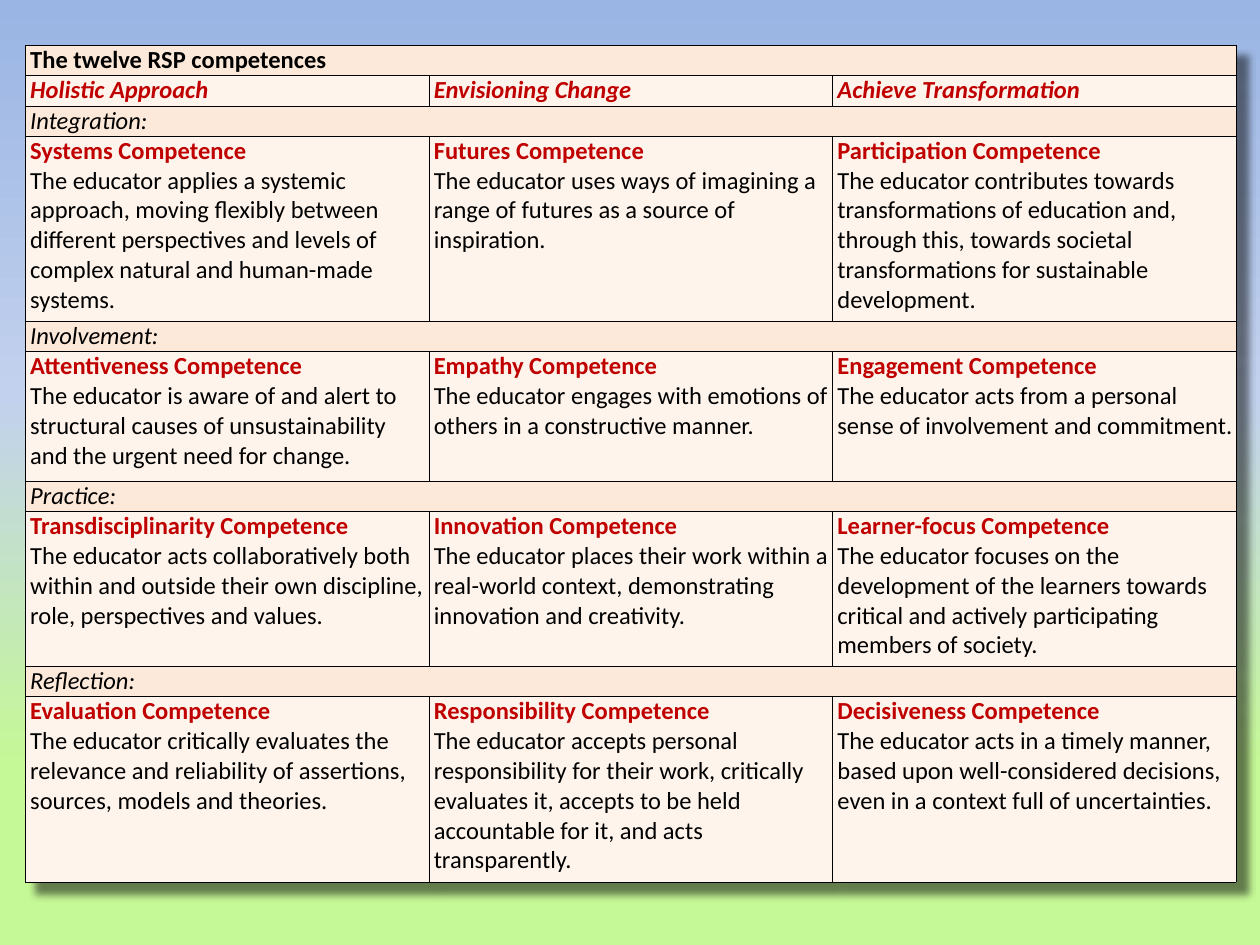
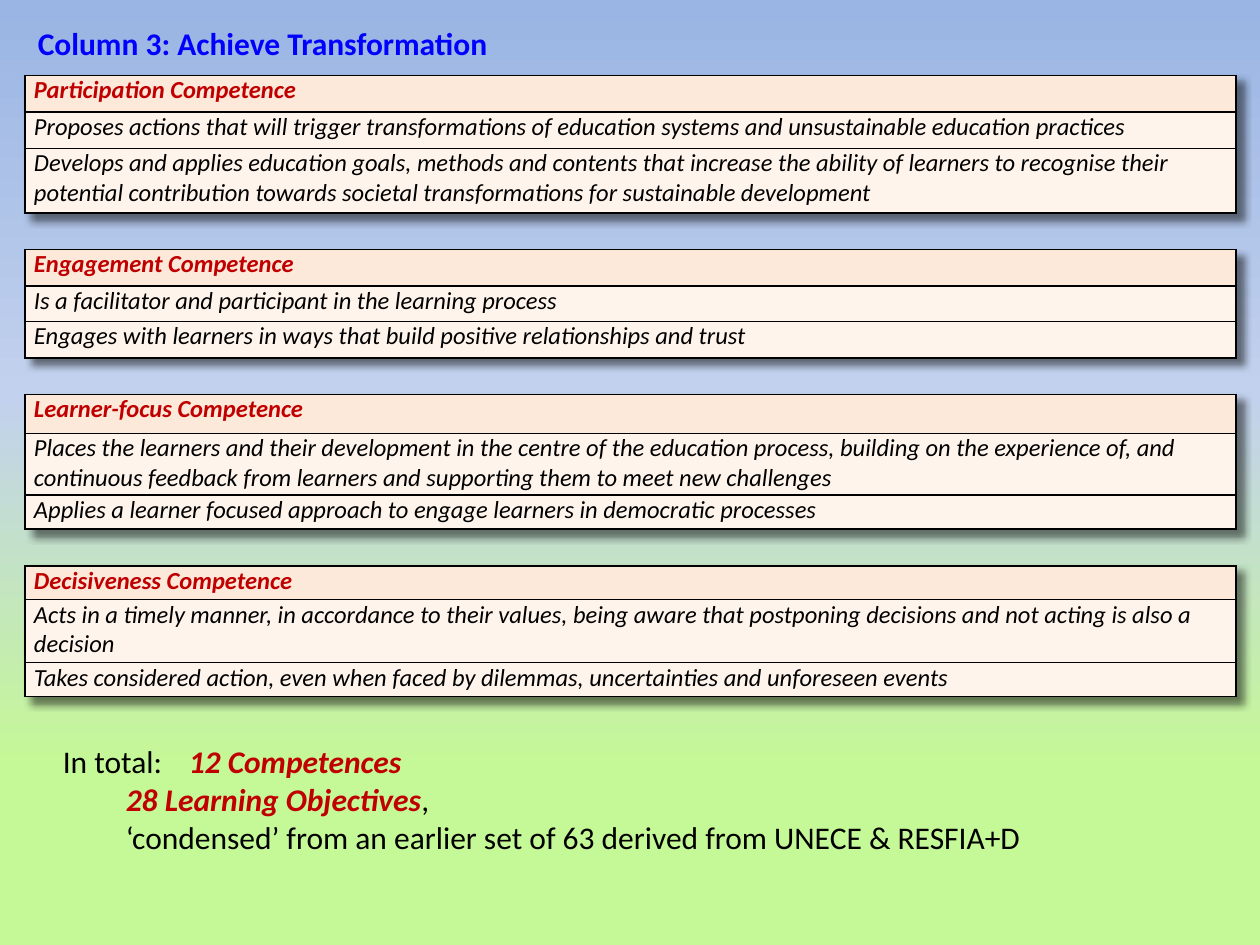
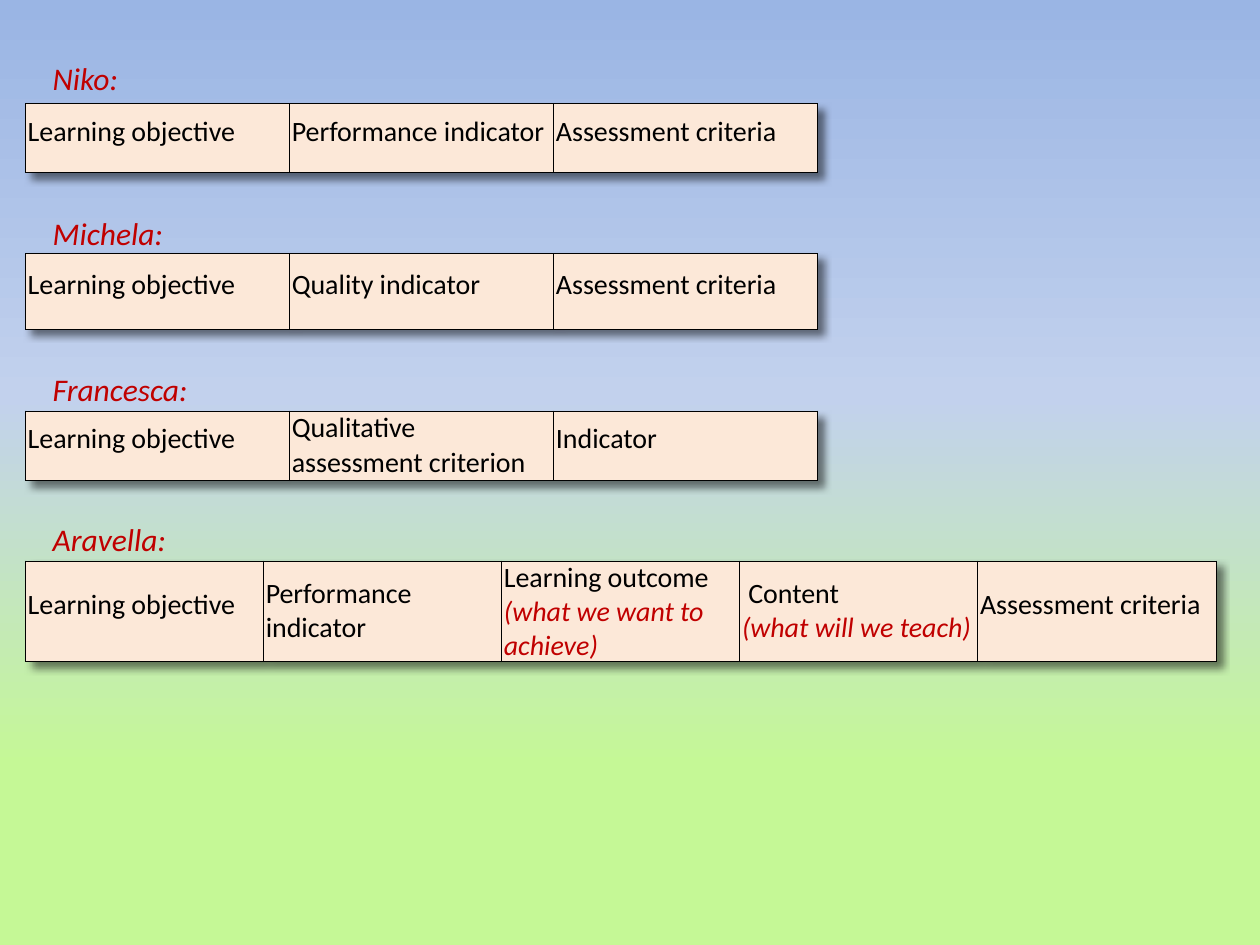
from copy import deepcopy
from typing import NamedTuple

from lxml import etree
from pptx import Presentation
from pptx.dml.color import RGBColor
from pptx.enum.text import MSO_ANCHOR, MSO_AUTO_SIZE, PP_ALIGN
from pptx.oxml.ns import qn
from pptx.slide import Slide
from pptx.table import Table, _Cell
from pptx.text.text import TextFrame
from pptx.util import Emu, Inches, Pt

TOP, MIDDLE = MSO_ANCHOR.TOP, MSO_ANCHOR.MIDDLE
FIT_SHAPE = MSO_AUTO_SIZE.SHAPE_TO_FIT_TEXT
LEFT = PP_ALIGN.LEFT

FONT = "Calibri"
BLACK, RED, BLUE = "000000", "C00000", "0000FF"
BAND, PALE, PEACH = "FDE9D9", "FEF4EC", "FCE8D8"
BACKGROUND = [(0, "9AB5E4"), (0.42, "C2D1ED"), (0.81, "C5F896")]
TITLE_ONLY, BLANK = 5, 6
TABLE_LEFT, FULL_WIDTH = 0.2, 9.61


class Span(NamedTuple):
    text: str
    color: str = BLACK
    bold: bool = False
    italic: bool = False


Paragraphs = list[list[Span]]


class CellText(NamedTuple):
    paragraphs: Paragraphs
    fill: str
    line_spacing: float | None = None


class TableStyle(NamedTuple):
    size: int
    border: float
    margin_left: float
    margin_right: float
    anchor: MSO_ANCHOR
    shadow_distance: float


class Stage(NamedTuple):
    name: str
    height: float
    competences: list[tuple[str, str]]


class Objectives(NamedTuple):
    competence: str
    top: float
    heights: list[float]
    objectives: list[str]


class Scheme(NamedTuple):
    author: str
    label_top: float
    label_width: float
    table_top: float
    width: float
    height: float
    cells: list[CellText]


OVERVIEW_STYLE = TableStyle(14, 0.25, 0.04, 0.02, TOP, 0.13)
OBJECTIVES_STYLE = TableStyle(14, 1, 0.07, 0.07, TOP, 0.07)
SCHEME_STYLE = TableStyle(16, 0.25, 0.02, 0.02, MIDDLE, 0.07)

APPROACHES = ["Holistic Approach", "Envisioning Change", "Achieve Transformation"]
BAR_HEIGHT = 0.24
STAGES = [
    Stage("Integration:", 1.47, [
        ("Systems Competence",
         "The educator applies a systemic approach, moving flexibly between different "
         "perspectives and levels of complex natural and human-made systems."),
        ("Futures Competence",
         "The educator uses ways of imagining a range of futures as a source of inspiration."),
        ("Participation Competence",
         "The educator contributes towards transformations of education and, through this, "
         "towards societal transformations for sustainable development."),
    ]),
    Stage("Involvement:", 1.03, [
        ("Attentiveness Competence",
         "The educator is aware of and alert to structural causes of unsustainability and "
         "the urgent need for change."),
        ("Empathy Competence",
         "The educator engages with emotions of others in a constructive manner."),
        ("Engagement Competence",
         "The educator acts from a personal sense of involvement and commitment."),
    ]),
    Stage("Practice:", 1.23, [
        ("Transdisciplinarity Competence",
         "The educator acts collaboratively both within and outside their own discipline, "
         "role, perspectives and values."),
        ("Innovation Competence",
         "The educator places their work within a real-world context, demonstrating "
         "innovation and creativity."),
        ("Learner-focus Competence",
         "The educator focuses on the development of the learners towards critical and "
         "actively participating members of society."),
    ]),
    Stage("Reflection:", 1.47, [
        ("Evaluation Competence",
         "The educator critically evaluates the relevance and reliability of assertions, "
         "sources, models and theories."),
        ("Responsibility Competence",
         "The educator accepts personal responsibility for their work, critically evaluates "
         "it, accepts to be held accountable for it, and acts transparently."),
        ("Decisiveness Competence",
         "The educator acts in a timely manner, based upon well-considered decisions, even "
         "in a context full of uncertainties."),
    ]),
]

TRANSFORMATION = [
    Objectives("Participation Competence", 0.6, [0.29, 0.29, 0.51], [
        "Proposes actions that will trigger transformations of education systems and "
        "unsustainable education practices",
        "Develops and applies education goals, methods and contents that increase the "
        "ability of learners to recognise their potential contribution towards societal "
        "transformations for sustainable development",
    ]),
    Objectives("Engagement Competence", 1.98, [0.29, 0.28, 0.29], [
        "Is a facilitator and participant in the learning process",
        "Engages with learners in ways that build positive relationships and trust",
    ]),
    Objectives("Learner-focus Competence", 3.13, [0.31, 0.49, 0.27], [
        "Places the learners and their development in the centre of the education process, "
        "building on the experience of, and continuous feedback from learners and "
        "supporting them to meet new challenges",
        "Applies a learner focused approach to engage learners in democratic processes",
    ]),
    Objectives("Decisiveness Competence", 4.49, [0.27, 0.5, 0.27], [
        "Acts in a timely manner, in accordance to their values, being aware that "
        "postponing decisions and not acting is also a decision",
        "Takes considered action, even when faced by dilemmas, uncertainties and "
        "unforeseen events",
    ]),
]

TOTALS = [
    [Span("In total:\t"), Span("12 Competences", RED, True, True)],
    [Span("\t28 Learning Objectives", RED, True, True), Span(",")],
    [Span("\t‘condensed’ from an earlier set of 63 derived from UNECE & RESFIA+D")],
]


def one_line(text: str) -> CellText:
    return CellText([[Span(text)]], PEACH, 12.1)


def wrapped(text: str, *remarks: str) -> CellText:
    """Cell at natural line spacing, with red remarks below its text."""
    return CellText([[Span(text)], *([Span(t, RED, italic=True)] for t in remarks)], PEACH)


OBJECTIVE = one_line("Learning objective")
CRITERIA = one_line("Assessment criteria")
SCHEMES = [
    Scheme("Niko:", 0.42, 0.73, 0.82, 6.29, 0.55,
           [OBJECTIVE, one_line("Performance indicator"), CRITERIA]),
    Scheme("Michela:", 1.65, 1.09, 2.01, 6.29, 0.6,
           [OBJECTIVE, one_line("Quality indicator"), CRITERIA]),
    Scheme("Francesca:", 2.89, 1.28, 3.26, 6.29, 0.55,
           [OBJECTIVE, wrapped("Qualitative assessment criterion"), one_line("Indicator")]),
    Scheme("Aravella:", 4.08, 1.11, 4.45, 9.45, 0.8,
           [OBJECTIVE, wrapped("Performance indicator"),
            wrapped("Learning outcome", "(what we want to", "achieve)"),
            wrapped(" Content", "(what will we teach)"), CRITERIA]),
]


def rgb(color: str) -> RGBColor:
    return RGBColor.from_string(color)


def write(tf: TextFrame, paragraphs: Paragraphs, size: int,
          line_spacing: float | None = None) -> None:
    for i, spans in enumerate(paragraphs):
        p = tf.paragraphs[0] if i == 0 else tf.add_paragraph()
        p.alignment = LEFT
        if line_spacing:
            p.line_spacing = Pt(line_spacing)
        for span in spans:
            r = p.add_run()
            r.text = span.text
            r.font.name, r.font.size = FONT, Pt(size)
            r.font.bold, r.font.italic = span.bold, span.italic
            r.font.color.rgb = rgb(span.color)


def add_solid(parent: etree._Element, color: str) -> None:
    fill = etree.SubElement(parent, qn("a:solidFill"))
    etree.SubElement(fill, qn("a:srgbClr"), val=color)


def add_borders(cell: _Cell, width: float) -> None:
    tc_pr = cell._tc.get_or_add_tcPr()
    for i, side in enumerate(("lnL", "lnR", "lnT", "lnB")):
        ln = etree.Element(qn(f"a:{side}"), w=str(Pt(width)))
        add_solid(ln, BLACK)
        tc_pr.insert(i, ln)


def add_shadow(table: Table, distance: float) -> None:
    effects = etree.Element(qn("a:effectLst"))
    shadow = etree.SubElement(effects, qn("a:outerShdw"), blurRad=str(Inches(0.06)),
                              dist=str(Inches(distance)), dir="2700000",
                              algn="tl", rotWithShape="0")
    color = etree.SubElement(shadow, qn("a:srgbClr"), val=BLACK)
    etree.SubElement(color, qn("a:alpha"), val="50000")
    table._tbl.tblPr.insert(0, effects)


def add_grid(slide: Slide, top: float, width: float, heights: list[float],
             rows: list[list[CellText]], style: TableStyle) -> None:
    """Table with equal columns, where a row of one cell spans all of them."""
    columns = max(len(row) for row in rows)
    table = slide.shapes.add_table(len(rows), columns, Inches(TABLE_LEFT), Inches(top),
                                   Inches(width), Inches(sum(heights))).table
    table.first_row = table.horz_banding = False
    add_shadow(table, style.shadow_distance)
    for column in table.columns:
        column.width = Emu(Inches(width) // columns)
    for i, (height, row) in enumerate(zip(heights, rows)):
        table.rows[i].height = Inches(height)
        if len(row) < columns:
            table.cell(i, 0).merge(table.cell(i, columns - 1))
        for j in range(columns):
            cell = table.cell(i, j)
            cell.margin_left = Inches(style.margin_left)
            cell.margin_right = Inches(style.margin_right)
            cell.margin_top = cell.margin_bottom = 0
            cell.vertical_anchor = style.anchor
            content = row[min(j, len(row) - 1)]
            cell.fill.solid()
            cell.fill.fore_color.rgb = rgb(content.fill)
            add_borders(cell, style.border)
            if j < len(row):
                write(cell.text_frame, content.paragraphs, style.size, content.line_spacing)


def add_text(slide: Slide, left: float, top: float, width: float, height: float,
             paragraphs: Paragraphs, wrap: bool) -> None:
    tf = slide.shapes.add_textbox(Inches(left), Inches(top),
                                  Inches(width), Inches(height)).text_frame
    tf.word_wrap, tf.auto_size = wrap, FIT_SHAPE
    write(tf, paragraphs, 18)


def place_title(slide: Slide, text: str) -> None:
    title = slide.shapes.title
    title.left, title.top = Inches(TABLE_LEFT), Inches(0.14)
    title.width, title.height = Inches(3.8), Inches(0.4)
    tf = title.text_frame
    tf.word_wrap, tf.auto_size, tf.vertical_anchor = False, FIT_SHAPE, TOP
    write(tf, [[Span(text, BLUE, True)]], 18)
    tf.paragraphs[0].space_before = Pt(6)


def set_background(prs: Presentation) -> None:
    master = prs.slide_master
    fill = master.background.fill
    fill.gradient()
    fill.gradient_angle = 270
    stop_list = master.element.find(f".//{qn('p:bg')}//{qn('a:gsLst')}")
    stop_list.append(deepcopy(stop_list[-1]))
    for stop, (position, color) in zip(fill.gradient_stops, BACKGROUND):
        stop.position, stop.color.rgb = position, rgb(color)


def build_overview(slide: Slide) -> None:
    rows = [
        [CellText([[Span("The twelve RSP competences", bold=True)]], BAND)],
        [CellText([[Span(name, RED, True, True)]], PALE) for name in APPROACHES],
    ]
    heights = [BAR_HEIGHT, BAR_HEIGHT]
    for stage in STAGES:
        rows.append([CellText([[Span(stage.name, italic=True)]], BAND)])
        rows.append([CellText([[Span(name, RED, True)], [Span(text)]], PALE)
                     for name, text in stage.competences])
        heights += [BAR_HEIGHT, stage.height]
    add_grid(slide, 0.36, FULL_WIDTH, heights, rows, OVERVIEW_STYLE)


def build_transformation(slide: Slide) -> None:
    place_title(slide, "Column 3: Achieve Transformation")
    for group in TRANSFORMATION:
        rows = [[CellText([[Span(group.competence, RED, True, True)]], BAND)]]
        rows += [[CellText([[Span(text, italic=True)]], PALE)] for text in group.objectives]
        add_grid(slide, group.top, FULL_WIDTH, group.heights, rows, OBJECTIVES_STYLE)
    add_text(slide, 0.4, 5.84, 9.09, 1.01, TOTALS, wrap=True)


def build_schemes(slide: Slide) -> None:
    for scheme in SCHEMES:
        add_grid(slide, scheme.table_top, scheme.width, [scheme.height],
                 [scheme.cells], SCHEME_STYLE)
        add_text(slide, 0.32, scheme.label_top, scheme.label_width, 0.4,
                 [[Span(scheme.author, RED, italic=True)]], wrap=False)


def main() -> None:
    prs = Presentation()
    prs.slide_width, prs.slide_height = Inches(10), Inches(7.5)
    set_background(prs)
    for layout, build in ((BLANK, build_overview), (TITLE_ONLY, build_transformation),
                          (BLANK, build_schemes)):
        build(prs.slides.add_slide(prs.slide_layouts[layout]))
    prs.save("out.pptx")


if __name__ == "__main__":
    main()
